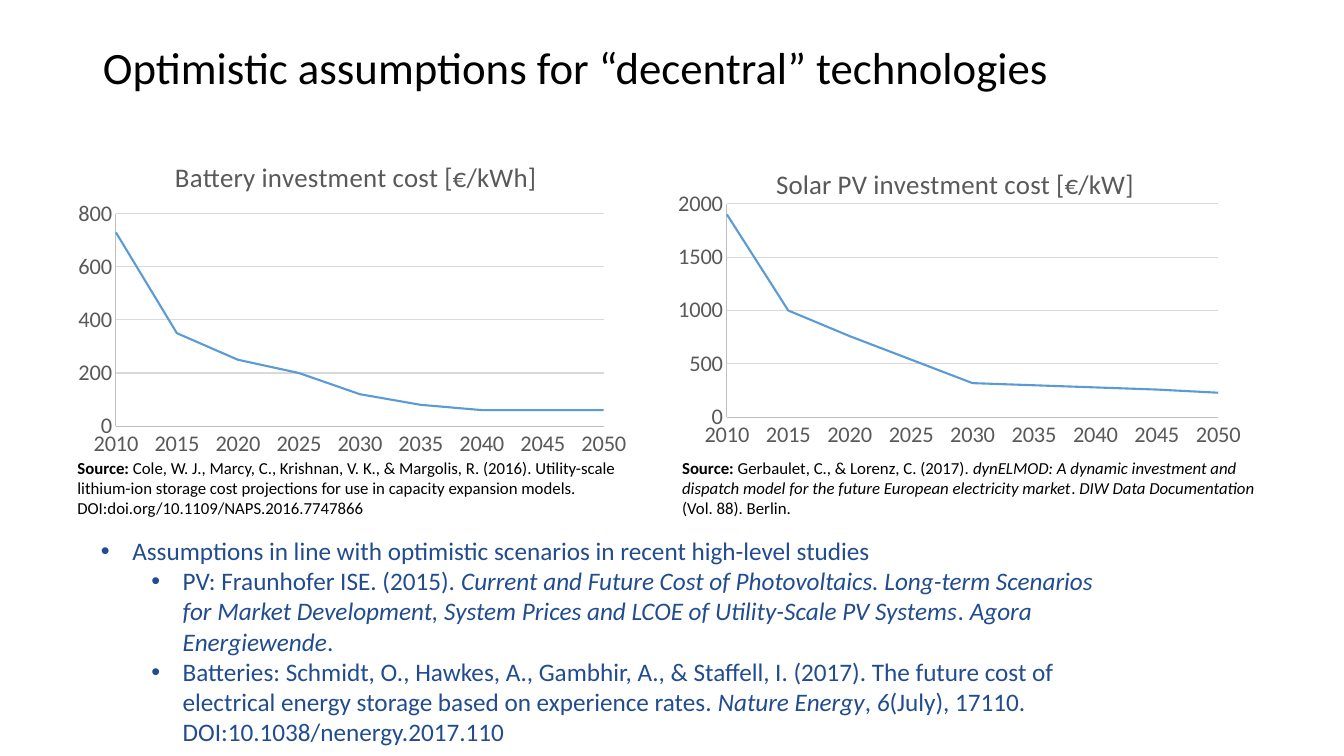
import pptx
import pptx.chart.data
import pptx.dml.color
import pptx.enum.chart
import pptx.enum.text
import pptx.oxml
import pptx.oxml.ns
import pptx.util

Cm = pptx.util.Cm
Pt = pptx.util.Pt
RGBColor = pptx.dml.color.RGBColor
qn = pptx.oxml.ns.qn

BLACK = RGBColor(0x00, 0x00, 0x00)
WHITE = RGBColor(0xFF, 0xFF, 0xFF)
GRAY = RGBColor(0x59, 0x59, 0x59)
AXIS_GRAY = RGBColor(0xBF, 0xBF, 0xBF)
GRID_GRAY = RGBColor(0xD9, 0xD9, 0xD9)
CURVE_BLUE = RGBColor(0x5B, 0x9B, 0xD5)
TEXT_BLUE = RGBColor(0x22, 0x4C, 0x90)
FONT = "Calibri"

YEARS = range(2010, 2051, 5)
BATTERY = {
    "title": "Battery investment cost [€/kWh]",
    "costs": [730, 350, 250, 200, 120, 80, 60, 60, 60],
    "top": 800, "step": 200,
    "title_at": (0.18, 0.06),
    "plot_at": (0.085, 0.245, 0.855, 0.642),
}
SOLAR = {
    "title": "Solar PV investment cost [€/kW]",
    "costs": [1900, 1000, 760, 540, 320, 300, 280, 260, 230],
    "top": 2000, "step": 500,
    "title_at": (0.2, 0.05),
    "plot_at": (0.127, 0.181, 0.811, 0.648),
}

# Each run is (text, style): "b" bold, "i" italic, "" plain
BATTERY_SOURCE = [
    ("Source: ", "b"),
    ("Cole, W. J., Marcy, C., Krishnan, V. K., & Margolis, R. (2016). "
     "Utility-scale lithium-ion storage cost projections for use in capacity "
     "expansion models. DOI:doi.org/10.1109/NAPS.2016.7747866", ""),
]
SOLAR_SOURCE = [
    ("Source: ", "b"),
    ("Gerbaulet, C., & Lorenz, C. (2017). ", ""),
    ("dynELMOD: A dynamic investment and dispatch model for the future "
     "European electricity market", "i"),
    (". ", ""),
    ("DIW Data Documentation", "i"),
    (" (Vol. 88). Berlin.", ""),
]
ASSUMPTIONS = [
    (0, [("Assumptions in line with optimistic scenarios in recent "
          "high-level studies", "")]),
    (1, [("PV: Fraunhofer ISE. (2015). ", ""),
         ("Current and Future Cost of Photovoltaics. Long-term Scenarios for "
          "Market Development, System Prices and LCOE of Utility-Scale PV "
          "Systems", "i"),
         (". ", ""),
         ("Agora Energiewende", "i"),
         (".", "")]),
    (1, [("Batteries: Schmidt, O., Hawkes, A., Gambhir, A., & Staffell, I. "
          "(2017). The future cost of electrical energy storage based on "
          "experience rates. ", ""),
         ("Nature Energy", "i"),
         (", ", ""),
         ("6", "i"),
         ("(July), 17110. DOI:10.1038/nenergy.2017.110", "")]),
]


def style_font(font, size, color):
    font.name = FONT
    font.size = Pt(size)
    font.color.rgb = color


def add_runs(para, runs, size, color):
    for text, style in runs:
        span = para.add_run()
        span.text = text
        style_font(span.font, size, color)
        span.font.bold = style == "b"
        span.font.italic = style == "i"


def move(shape, box):
    shape.left, shape.top, shape.width, shape.height = (Cm(n) for n in box)


def prepare_frame(shape):
    frame = shape.text_frame
    frame.word_wrap = True
    frame.auto_size = pptx.enum.text.MSO_AUTO_SIZE.NONE
    frame.vertical_anchor = pptx.enum.text.MSO_ANCHOR.TOP
    return frame


def set_layout(parent, index, fractions, inner=False):
    """Place a chart part by fractions of the chart area."""
    for old in parent.findall(qn("c:layout")):
        parent.remove(old)
    keys = ("x", "y", "w", "h")[:len(fractions)]
    target = '<c:layoutTarget val="inner"/>' if inner else ""
    modes = "".join(f'<c:{key}Mode val="edge"/>' for key in keys[:2])
    values = "".join(f'<c:{key} val="{part}"/>'
                     for key, part in zip(keys, fractions))
    parent.insert(index, pptx.oxml.parse_xml(
        f'<c:layout {pptx.oxml.ns.nsdecls("c")}><c:manualLayout>'
        f'{target}{modes}{values}</c:manualLayout></c:layout>'))


def style_axis(axis, low, high, step):
    axis.minimum_scale, axis.maximum_scale, axis.major_unit = low, high, step
    axis.major_tick_mark = pptx.enum.chart.XL_TICK_MARK.NONE
    axis.minor_tick_mark = pptx.enum.chart.XL_TICK_MARK.NONE
    axis.tick_labels.number_format = "General"
    axis.tick_labels.number_format_is_linked = False
    style_font(axis.tick_labels.font, 16, GRAY)
    axis.format.line.color.rgb = AXIS_GRAY
    axis.format.line.width = Pt(0.75)


def add_title(page, box):
    title = page.shapes.title
    move(title, box)
    para = prepare_frame(title).paragraphs[0]
    para.alignment = pptx.enum.text.PP_ALIGN.LEFT
    para.line_spacing = 0.9
    add_runs(para, [("Optimistic assumptions for “decentral” technologies", "")],
             32, BLACK)


def add_cost_chart(page, box, cost):
    data = pptx.chart.data.XyChartData()
    points = data.add_series(cost["title"])
    for year, value in zip(YEARS, cost["costs"]):
        points.add_data_point(year, value)
    chart = page.shapes.add_chart(
        pptx.enum.chart.XL_CHART_TYPE.XY_SCATTER_SMOOTH_NO_MARKERS,
        *(Cm(n) for n in box), data).chart
    style_font(chart.font, 16, BLACK)
    chart.has_legend = False

    # Title and plot area
    chart.has_title = True
    para = chart.chart_title.text_frame.paragraphs[0]
    add_runs(para, [(cost["title"], "")], 19.2, GRAY)
    set_layout(chart.element.find(".//" + qn("c:title")), 1, cost["title_at"])
    set_layout(chart.element.find(".//" + qn("c:plotArea")), 0,
               cost["plot_at"], inner=True)

    # Axes and grid
    style_axis(chart.category_axis, YEARS[0], YEARS[-1], 5)
    style_axis(chart.value_axis, 0, cost["top"], cost["step"])
    chart.category_axis.has_major_gridlines = False
    chart.value_axis.has_major_gridlines = True
    grid = chart.value_axis.major_gridlines.format.line
    grid.color.rgb = GRID_GRAY
    grid.width = Pt(0.75)

    # Cost curve
    plot = chart.plots[0]
    plot.vary_by_categories = False
    curve = plot.series[0]
    curve.smooth = True
    curve.marker.style = pptx.enum.chart.XL_MARKER_STYLE.NONE
    curve.format.line.color.rgb = CURVE_BLUE
    curve.format.line.width = Pt(1.5)


def add_source(page, box, runs):
    note = page.shapes.add_textbox(*(Cm(n) for n in box))
    add_runs(prepare_frame(note).paragraphs[0], runs, 12, BLACK)


def add_assumptions(page, box):
    body = page.placeholders[1]
    move(body, box)
    body.fill.solid()
    body.fill.fore_color.rgb = WHITE
    frame = prepare_frame(body)
    for index, (level, runs) in enumerate(ASSUMPTIONS):
        para = frame.add_paragraph() if index else frame.paragraphs[0]
        para.level = level
        properties = para._p.get_or_add_pPr()
        properties.set("marL", str(Cm(0.79 + 1.27 * level)))
        properties.set("indent", str(-Cm(0.79)))
        for bullet in ('a:buFont {} typeface="Arial"', 'a:buChar {} char="•"'):
            properties.append(pptx.oxml.parse_xml(
                f'<{bullet.format(pptx.oxml.ns.nsdecls("a"))}/>'))
        para.space_before = Pt(0)
        add_runs(para, runs, 18, TEXT_BLUE)


def main():
    deck = pptx.Presentation()
    deck.slide_width, deck.slide_height = Cm(33.87), Cm(19.05)
    page = deck.slides.add_slide(deck.slide_layouts[1])
    add_title(page, (2.34, 1.02, 29.21, 3.68))
    add_cost_chart(page, (1.7, 3.35, 14.38, 8.33), BATTERY)
    add_cost_chart(page, (16.38, 3.63, 15.27, 8.31), SOLAR)
    add_source(page, (1.7, 11.4, 14.94, 2.31), BATTERY_SOURCE)
    add_source(page, (16.94, 11.4, 14.94, 1.8), SOLAR_SOURCE)
    add_assumptions(page, (2.29, 13.36, 25.65, 5.64))
    deck.save("out.pptx")


if __name__ == "__main__":
    main()
